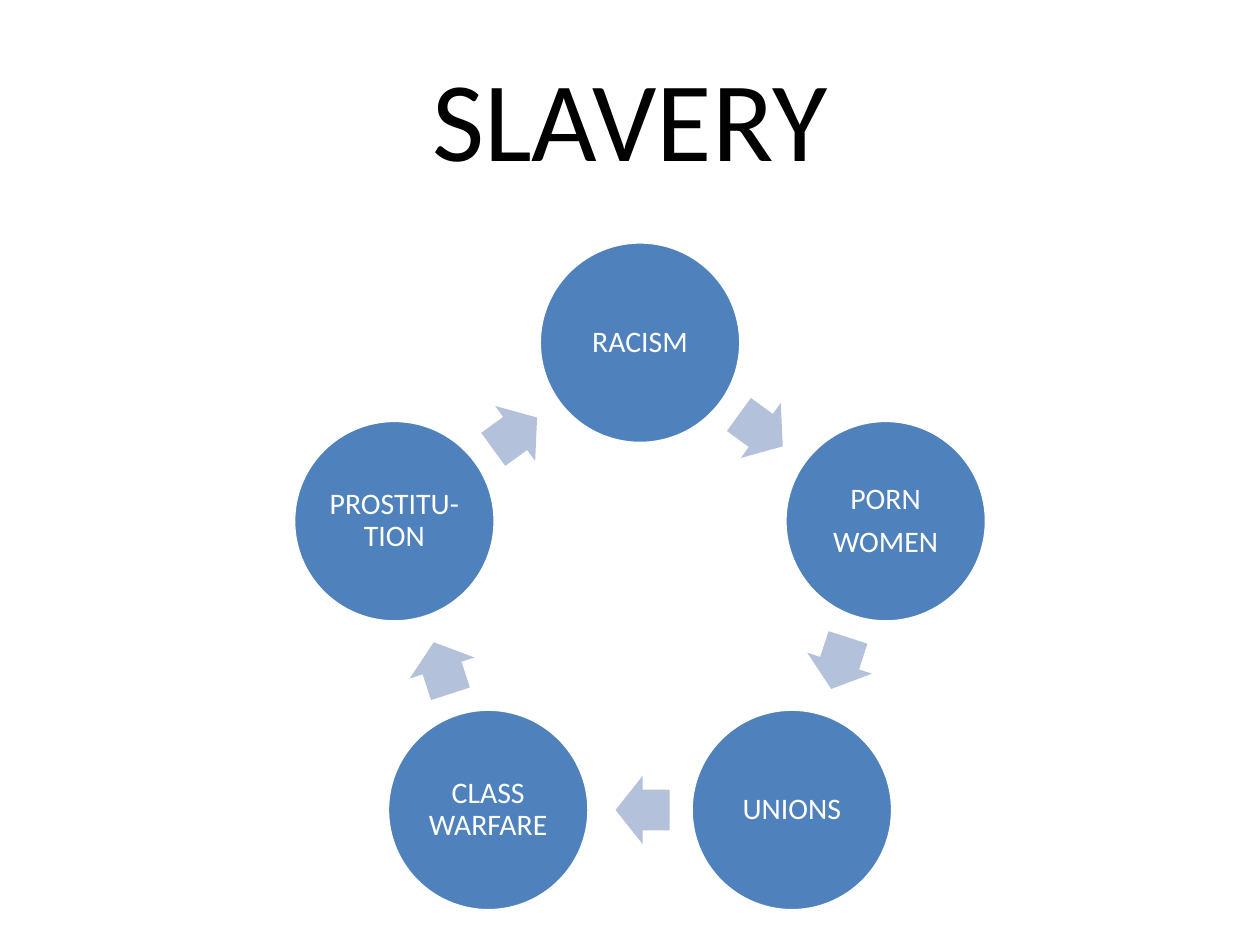
from math import cos, sin, radians
from pptx import Presentation
from pptx.dml.color import RGBColor
from pptx.enum.shapes import MSO_SHAPE
from pptx.enum.text import MSO_ANCHOR, PP_ALIGN
from pptx.util import Inches, Pt

# Content, clockwise from the top; one string per paragraph
TITLE = "SLAVERY"
NODES = [["RACISM"], ["PORN", "WOMEN"], ["UNIONS"],
         ["CLASS WARFARE"], ["PROSTITU-TION"]]

COLORS = {"title": "000000", "node": "4F81BD", "arrow": "B3C1DB", "white": "FFFFFF"}
FONT = "Calibri"

# Ring geometry in inches
MID_X, MID_Y, RADIUS = 5.08, 4.77, 2.05
NODE = 1.6
ARROW_W, ARROW_H = 0.43, 0.54
BACK = 0.02  # arrows sit slightly behind the midpoint
STEP = 360 / len(NODES)


def color(name):
    return RGBColor.from_string(COLORS[name])


def add_text(frame, lines, size, name):
    frame.word_wrap = True
    frame.vertical_anchor = MSO_ANCHOR.MIDDLE
    for i, line in enumerate(lines):
        para = frame.add_paragraph() if i else frame.paragraphs[0]
        para.alignment = PP_ALIGN.CENTER
        run = para.add_run()
        run.text = line
        run.font.size = Pt(size)
        run.font.name = FONT
        run.font.color.rgb = color(name)


def add_part(slide, kind, x, y, w, h, fill):
    """Add a filled shape centred on x, y."""
    part = slide.shapes.add_shape(kind, Inches(x - w / 2), Inches(y - h / 2),
                                  Inches(w), Inches(h))
    part.shadow.inherit = False
    part.fill.solid()
    part.fill.fore_color.rgb = color(fill)
    return part


def add_node(slide, lines, turn):
    x = MID_X + RADIUS * sin(radians(turn))
    y = MID_Y - RADIUS * cos(radians(turn))
    node = add_part(slide, MSO_SHAPE.OVAL, x, y, NODE, NODE, "node")
    node.line.color.rgb = color("white")
    node.line.width = Pt(2)
    frame = node.text_frame
    frame.margin_left = frame.margin_right = Inches(0.02)
    frame.margin_top = frame.margin_bottom = Inches(0.02)
    add_text(frame, lines, 17, "white")
    for para in frame.paragraphs:
        para.line_spacing = 0.9
    for para in frame.paragraphs[:-1]:
        para.space_after = Pt(6)


def add_arrow(slide, turn):
    """Add an arrow on the chord's midpoint, pointing clockwise."""
    reach = RADIUS * cos(radians(STEP / 2))
    out, along = sin(radians(turn)), cos(radians(turn))
    x = MID_X + reach * out - BACK * along
    y = MID_Y - reach * along - BACK * out
    arrow = add_part(slide, MSO_SHAPE.RIGHT_ARROW, x, y, ARROW_W, ARROW_H, "arrow")
    arrow.line.fill.background()
    arrow.adjustments[0] = 0.6
    arrow.adjustments[1] = 0.5
    arrow.rotation = turn


def main():
    deck = Presentation()
    deck.slide_width, deck.slide_height = Inches(10), Inches(7.5)
    slide = deck.slides.add_slide(deck.slide_layouts[5])

    # Title
    title = slide.shapes.title
    title.left, title.top = Inches(0.5), Inches(0.3)
    title.width, title.height = Inches(9), Inches(1.25)
    add_text(title.text_frame, [TITLE], 64.8, "title")

    # Cycle
    for i, lines in enumerate(NODES):
        add_node(slide, lines, i * STEP)
        add_arrow(slide, (i + 0.5) * STEP)

    deck.save("out.pptx")


if __name__ == "__main__":
    main()
